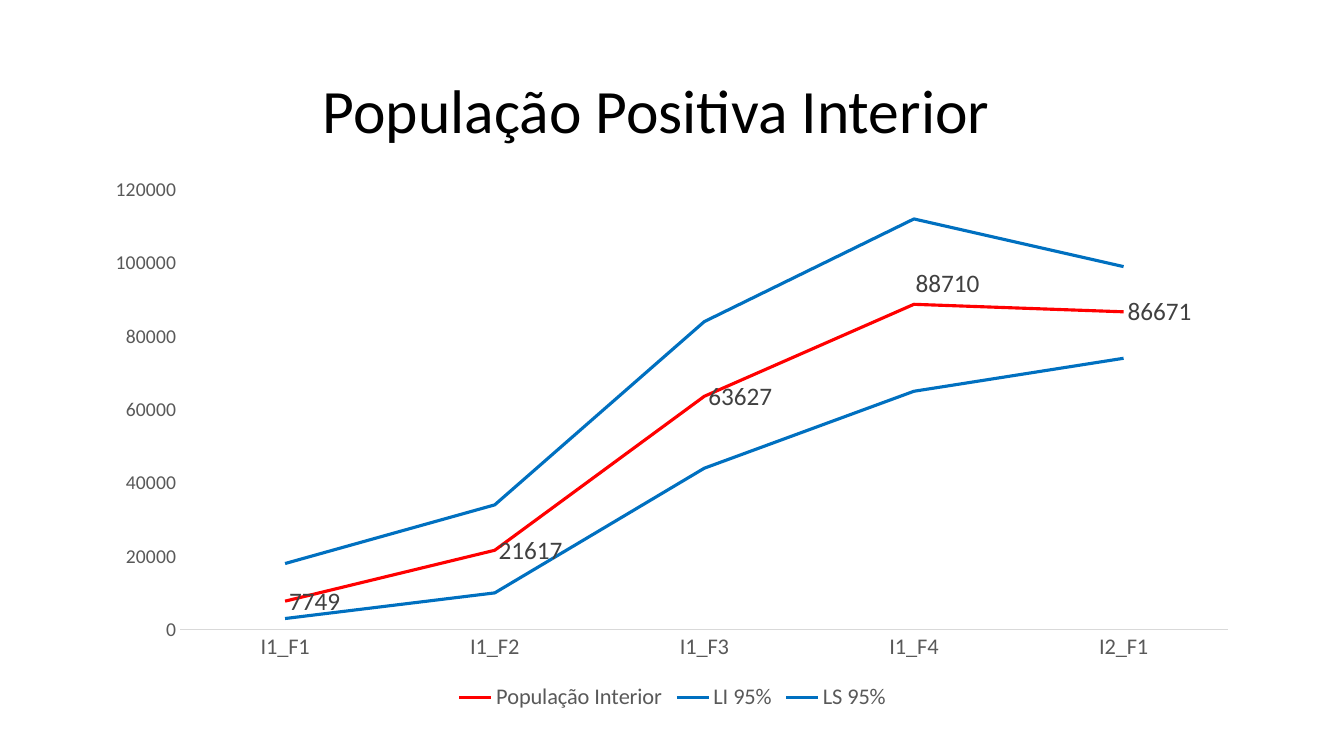
from lxml import etree
from pptx import Presentation
from pptx.chart.data import CategoryChartData
from pptx.dml.color import RGBColor
from pptx.enum.chart import XL_CHART_TYPE, XL_LABEL_POSITION, XL_LEGEND_POSITION, XL_TICK_MARK
from pptx.enum.text import MSO_ANCHOR, PP_ALIGN
from pptx.oxml.ns import qn
from pptx.util import Inches, Pt

COLORS = {"title": "000000", "axis": "595959", "label": "404040",
          "baseline": "D9D9D9", "estimate": "FF0000", "limit": "0070C0"}


def format_text(font, size, color):
    font.name = "Calibri"
    font.size = Pt(size)
    font.bold = False
    font.color.rgb = RGBColor.from_string(COLORS[color])


def make_layout(**settings):
    layout = etree.Element(qn("c:layout"))
    manual = etree.SubElement(layout, qn("c:manualLayout"))
    for tag, value in settings.items():
        etree.SubElement(manual, qn(f"c:{tag}")).set("val", str(value))
    return layout


deck = Presentation()
deck.slide_width, deck.slide_height = Inches(13.33), Inches(7.5)
page = deck.slides.add_slide(deck.slide_layouts[6])

# Title
box = page.shapes.add_textbox(Inches(0.59), Inches(0.4), Inches(11.84), Inches(1.45))
box.text_frame.word_wrap = True
box.text_frame.vertical_anchor = MSO_ANCHOR.MIDDLE
para = box.text_frame.paragraphs[0]
para.alignment = PP_ALIGN.CENTER
para.line_spacing = 0.9
span = para.add_run()
span.text = "População Positiva Interior"
format_text(span.font, size=44, color="title")

# Chart: estimate with its lower and upper limits
series_rows = [
    ("População Interior", (7749, 21617, 63627, 88710, 86671), "estimate"),
    ("LI 95%", (3000, 10000, 44000, 65000, 74000), "limit"),
    ("LS 95%", (18000, 34000, 84000, 112000, 99000), "limit"),
]
data = CategoryChartData(number_format="0")
data.categories = ["I1_F1", "I1_F2", "I1_F3", "I1_F4", "I2_F1"]
for name, values, color in series_rows:
    data.add_series(name, values)
chart = page.shapes.add_chart(XL_CHART_TYPE.LINE, Inches(0.92), Inches(1.65),
                              Inches(11.5), Inches(5.45), data).chart
chart.has_title = False
format_text(chart.font, size=10, color="title")

for series, (name, values, color) in zip(chart.plots[0].series, series_rows):
    series.smooth = False
    series.format.line.width = Pt(2.25)
    series.format.line.color.rgb = RGBColor.from_string(COLORS[color])

# Axes and legend
for axis, size in ((chart.category_axis, 16), (chart.value_axis, 14)):
    axis.has_major_gridlines = False
    axis.major_tick_mark = axis.minor_tick_mark = XL_TICK_MARK.NONE
    format_text(axis.tick_labels.font, size=size, color="axis")
baseline = chart.category_axis.format.line
baseline.width = Pt(0.75)
baseline.color.rgb = RGBColor.from_string(COLORS["baseline"])
chart.value_axis.format.line.fill.background()
chart.value_axis.minimum_scale = 0
chart.value_axis.maximum_scale = 120000
chart.value_axis.major_unit = 20000
chart.has_legend = True
chart.legend.position = XL_LEGEND_POSITION.BOTTOM
chart.legend.include_in_layout = False
format_text(chart.legend.font, size=16, color="axis")

# Value labels, with the peak's label raised above its line
estimate = chart.plots[0].series[0]
labels = estimate.data_labels
labels.show_value = True
labels.number_format = "0"
labels.number_format_is_linked = False
peak_label = estimate.points[3].data_label
for label in (labels, peak_label):
    label.position = XL_LABEL_POSITION.RIGHT
    format_text(label.font, size=18, color="label")
chart_xml = chart.element
peak_index = chart_xml.find(".//" + qn("c:dLbl") + "/" + qn("c:idx"))
peak_index.addnext(make_layout(x=-0.002, y=-0.037))

# Plot area
plot_area = chart_xml.find(".//" + qn("c:plotArea"))
for layout in plot_area.findall(qn("c:layout")):
    plot_area.remove(layout)
plot_area.insert(0, make_layout(layoutTarget="inner", xMode="edge", yMode="edge",
                                x=0.0755, y=0.0425, w=0.904, h=0.801))

deck.save("out.pptx")
